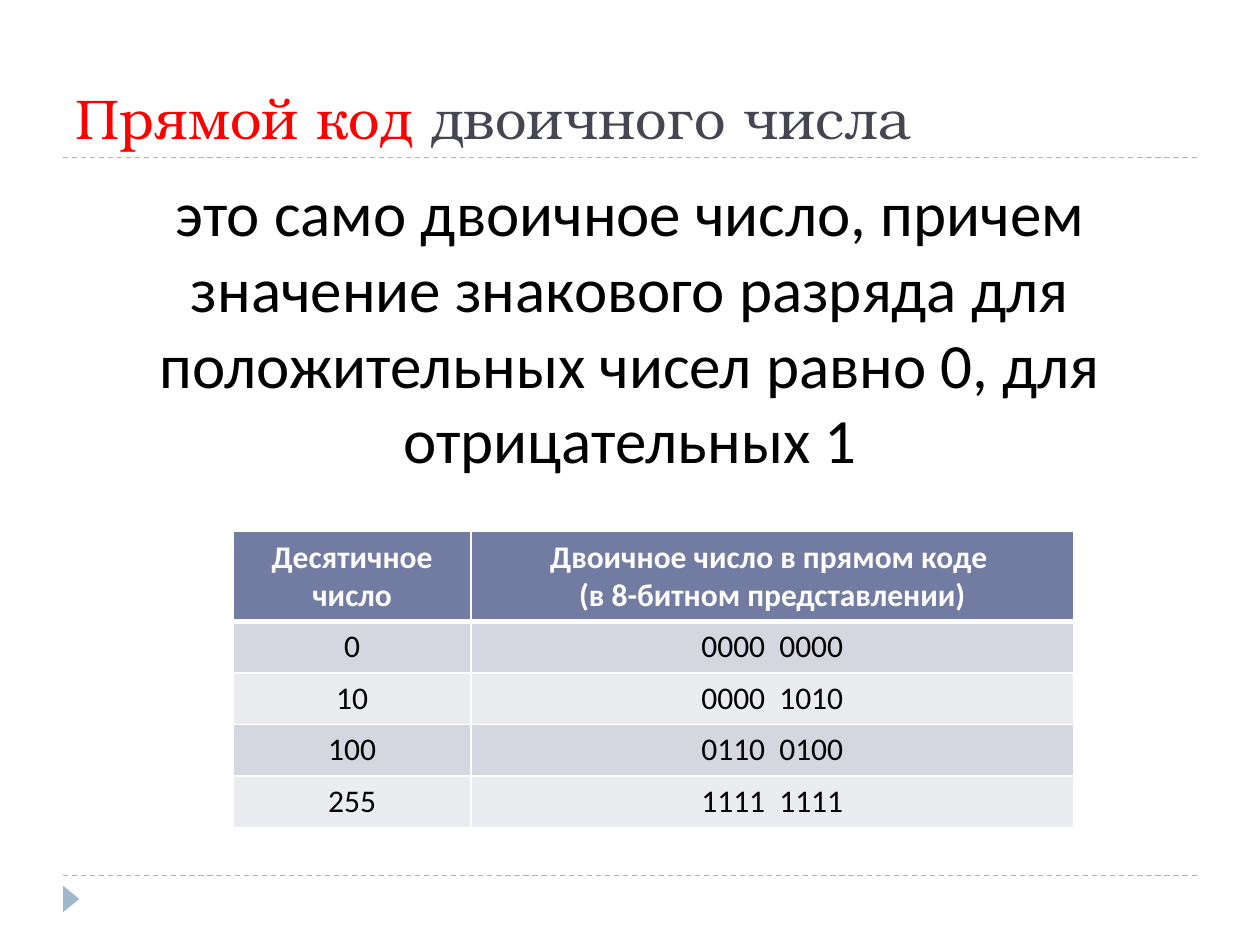
from lxml import etree
from pptx import Presentation
from pptx.dml.color import RGBColor
from pptx.enum import dml, shapes, text
from pptx.oxml import ns
from pptx.util import Inches, Pt

WHITE = RGBColor(0xFF, 0xFF, 0xFF)
BLACK = RGBColor(0, 0, 0)
RED = RGBColor(0xFF, 0, 0)
TITLE_GREY = RGBColor(0x46, 0x46, 0x53)
ACCENT = RGBColor(0x9F, 0xB8, 0xCD)
HEADER_FILL = RGBColor(0x72, 0x7C, 0xA3)
BAND_FILLS = (RGBColor(0xD5, 0xD7, 0xE0), RGBColor(0xEB, 0xEC, 0xF0))

TITLE_FONT = "TeX Gyre Bonum"
BODY_FONT = "Calibri"

TITLE_PARTS = (("Прямой код ", RED), ("двоичного числа", TITLE_GREY))
DEFINITION = ("это само двоичное число, причем значение знакового разряда "
              "для положительных чисел равно 0, для отрицательных 1")
CODE_ROWS = (
    ("Десятичное число",
     "Двоичное число в прямом коде \v(в 8-битном представлении)"),
    ("0", "0000  0000"),
    ("10", "0000  1010"),
    ("100", "0110  0100"),
    ("255", "1111  1111"),
)


def style_font(font, name, size, color, bold=False):
    font.name, font.size, font.bold = name, Pt(size), bold
    font.color.rgb = color


def place(shape, left, top, width, height):
    shape.left, shape.top = Inches(left), Inches(top)
    shape.width, shape.height = Inches(width), Inches(height)


def add_dashed_rule(slide, left, top, width):
    rule = slide.shapes.add_connector(
        shapes.MSO_CONNECTOR.STRAIGHT, Inches(left), Inches(top),
        Inches(left + width), Inches(top))
    rule.line.color.rgb = ACCENT
    rule.line.width = Pt(0.75)
    rule.line.dash_style = dml.MSO_LINE.DASH
    etree.SubElement(rule._element.spPr, ns.qn("a:effectLst"))


def add_corner_marker(slide, left, top, width, height):
    marker = slide.shapes.add_shape(
        shapes.MSO_SHAPE.ISOSCELES_TRIANGLE, Inches(left), Inches(top),
        Inches(width), Inches(height))
    marker.rotation = 90
    marker.shadow.inherit = False
    marker.fill.solid()
    marker.fill.fore_color.rgb = ACCENT
    marker.line.fill.background()


def fill_title(title, left, top, width, height):
    place(title, left, top, width, height)
    frame = title.text_frame
    frame.auto_size = text.MSO_AUTO_SIZE.NONE
    frame.vertical_anchor = text.MSO_ANCHOR.BOTTOM
    paragraph = frame.paragraphs[0]
    paragraph.alignment = text.PP_ALIGN.LEFT
    for wording, color in TITLE_PARTS:
        run = paragraph.add_run()
        run.text = wording
        style_font(run.font, TITLE_FONT, 32, color)


def fill_definition(body, left, top, width, height):
    place(body, left, top, width, height)
    frame = body.text_frame
    frame.auto_size = text.MSO_AUTO_SIZE.NONE
    frame.text = DEFINITION
    paragraph = frame.paragraphs[0]
    paragraph.alignment = text.PP_ALIGN.CENTER
    paragraph.space_before = Pt(6)
    properties = paragraph._p.get_or_add_pPr()
    properties.set("marL", "0")
    properties.set("indent", "0")
    etree.SubElement(properties, ns.qn("a:buNone"))
    style_font(paragraph.runs[0].font, BODY_FONT, 36, BLACK)


def set_cell_borders(cell, bottom_width):
    """Draw white borders, 1 pt wide except at the bottom."""
    properties = cell._tc.get_or_add_tcPr()
    widths = {"a:lnL": 1, "a:lnR": 1, "a:lnT": 1, "a:lnB": bottom_width}
    for index, (tag, width) in enumerate(widths.items()):
        line = etree.Element(ns.qn(tag), w=str(Pt(width)))
        fill = etree.SubElement(line, ns.qn("a:solidFill"))
        etree.SubElement(fill, ns.qn("a:srgbClr"), val=str(WHITE))
        properties.insert(index, line)


def add_code_table(slide, left, top, width, height):
    row_height, first_width = 0.41, 1.89
    table = slide.shapes.add_table(
        len(CODE_ROWS), len(CODE_ROWS[0]), Inches(left), Inches(top),
        Inches(width), Inches(height)).table
    table.columns[0].width = Inches(first_width)
    table.columns[1].width = Inches(width - first_width)
    header_height = height - row_height * (len(CODE_ROWS) - 1)
    for row_index, values in enumerate(CODE_ROWS):
        is_header = row_index == 0
        table.rows[row_index].height = Inches(
            header_height if is_header else row_height)
        for column_index, value in enumerate(values):
            cell = table.cell(row_index, column_index)
            cell.text_frame.text = value
            cell.fill.solid()
            cell.fill.fore_color.rgb = (
                HEADER_FILL if is_header else BAND_FILLS[(row_index - 1) % 2])
            set_cell_borders(cell, 3 if is_header else 1)
            paragraph = cell.text_frame.paragraphs[0]
            paragraph.alignment = text.PP_ALIGN.CENTER
            for run in paragraph.runs:
                style_font(run.font, BODY_FONT, 18,
                           WHITE if is_header else BLACK, is_header)


def main():
    presentation = Presentation()
    presentation.slide_width, presentation.slide_height = Inches(10), Inches(7.5)
    slide = presentation.slides.add_slide(presentation.slide_layouts[1])
    for rule_top in (6.95, 1.25):
        add_dashed_rule(slide, 0.5, rule_top, 9)
    add_corner_marker(slide, 0.46, 7.07, 0.21, 0.13)
    fill_title(slide.shapes.title, 0.5, 0.17, 9, 1.08)
    fill_definition(slide.placeholders[1], 0.5, 1.33, 9, 5.4)
    add_code_table(slide, 1.85, 4.22, 6.67, 2.32)
    presentation.save("out.pptx")


if __name__ == "__main__":
    main()
